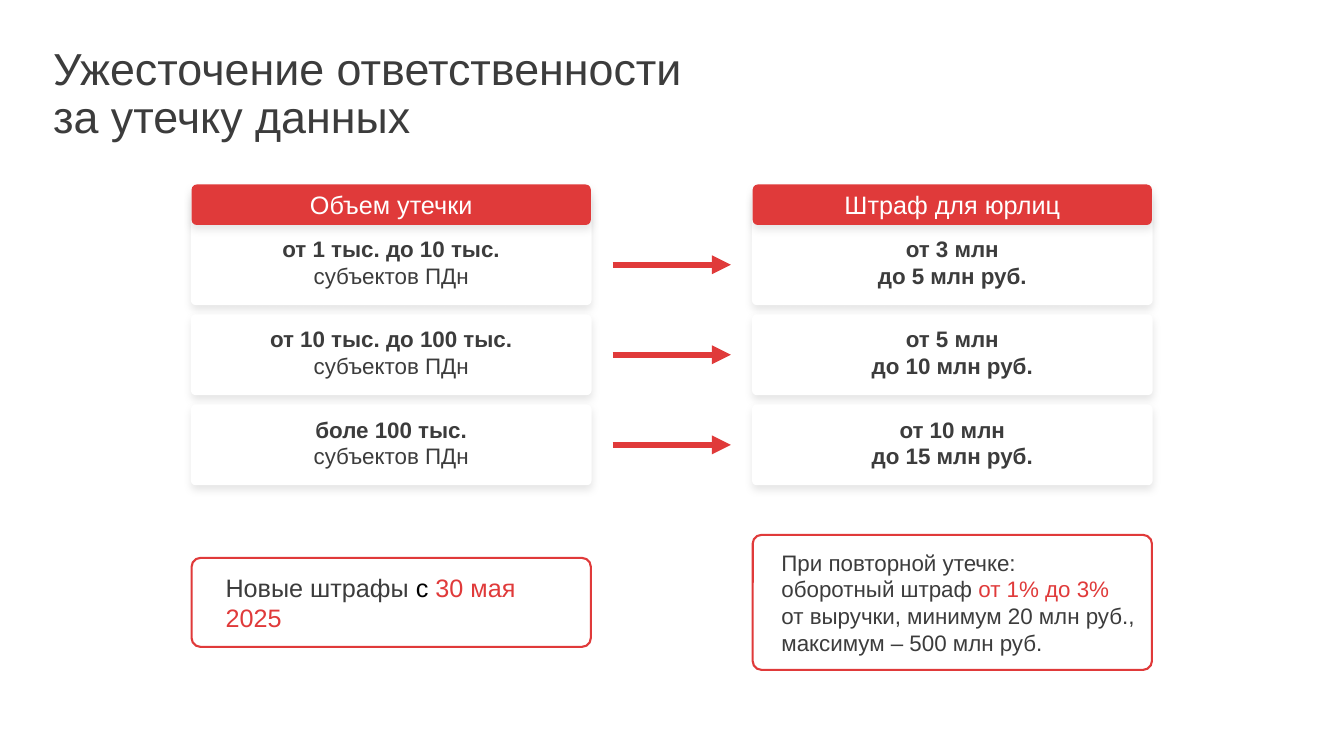
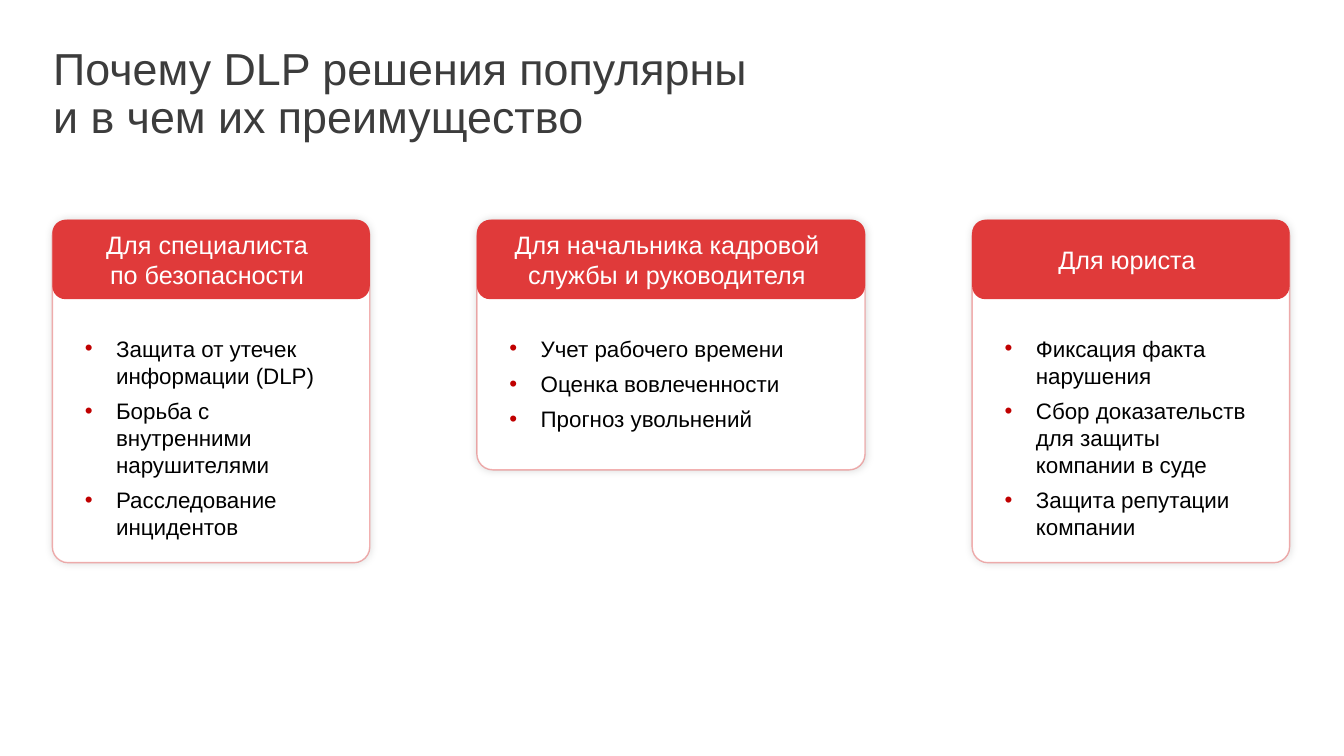
from lxml.etree import SubElement
from pptx import Presentation
from pptx.dml.color import RGBColor
from pptx.enum.shapes import MSO_CONNECTOR, MSO_SHAPE
from pptx.enum.text import MSO_ANCHOR, PP_ALIGN
from pptx.oxml.ns import qn
from pptx.util import Cm, Pt

FONT = "Arial"
RED, DARK, WHITE, BLACK, DOT = "E03A3A", "3C3C3C", "FFFFFF", "000000", "C00000"
SOFT = (10, 6, 3, 93)  # opacity %, blur pt, distance pt, angle
GLOW = (15, 6, 0, 180)


def paint(fmt, hue):
    fmt.solid()
    fmt.fore_color.rgb = RGBColor.from_string(hue)


def shade(shape, alpha, blur, dist, angle):
    """Give the shape an outer black shadow."""
    effects = shape._element.spPr.find(qn("a:effectLst"))
    outer = SubElement(effects, qn("a:outerShdw"), blurRad=str(Pt(blur)),
                       dist=str(Pt(dist)), dir=str(angle * 60000),
                       algn="ctr", rotWithShape="0")
    hue = SubElement(outer, qn("a:srgbClr"), val=BLACK)
    SubElement(hue, qn("a:alpha"), val=str(alpha * 1000))


def panel(slide, box, round_by, fill=None, line=None, width=1, alpha=100, shadow=None):
    """Add a rounded box; round_by is the corner radius in cm."""
    shape = slide.shapes.add_shape(MSO_SHAPE.ROUNDED_RECTANGLE, *map(Cm, box))
    shape.adjustments[0] = round_by / min(box[2:])
    shape.shadow.inherit = False
    if fill:
        paint(shape.fill, fill)
    else:
        shape.fill.background()
    if line:
        paint(shape.line.fill, line)
        shape.line.width = Pt(width)
        if alpha < 100:
            hue = shape.line._ln.find(".//" + qn("a:srgbClr"))
            SubElement(hue, qn("a:alpha"), val=str(alpha * 1000))
    else:
        shape.line.fill.background()
    if shadow:
        shade(shape, *shadow)
    return shape


def bullet(para):
    props = para._p.get_or_add_pPr()
    props.set("marL", str(Cm(0.79)))
    props.set("indent", str(-Cm(0.79)))
    SubElement(SubElement(props, qn("a:buClr")), qn("a:srgbClr"), val=DOT)
    SubElement(props, qn("a:buFont"), typeface=FONT)
    SubElement(props, qn("a:buChar"), char="•")
    para.space_after = Pt(6)


def write(shape, paras, size, hue, align=PP_ALIGN.LEFT, anchor=MSO_ANCHOR.MIDDLE,
          pads=(0.25, 0.13, 0.25, 0.13), dots=False, pitch=None):
    """Fill a shape; each paragraph is a list of (text, colour or None, bold) runs."""
    frame = shape.text_frame
    frame.word_wrap = True
    frame.vertical_anchor = anchor
    (frame.margin_left, frame.margin_top,
     frame.margin_right, frame.margin_bottom) = map(Cm, pads)
    for i, runs in enumerate(paras):
        para = frame.add_paragraph() if i else frame.paragraphs[0]
        para.alignment = align
        if dots:
            bullet(para)
        if pitch:
            para.line_spacing = pitch
        for text, tint, bold in runs:
            run = para.add_run()
            run.text = text
            run.font.name, run.font.size, run.font.bold = FONT, Pt(size), bold
            run.font.color.rgb = RGBColor.from_string(tint or hue)


def plain(*lines):
    return [[(line, None, False)] for line in lines]


def start(deck, *title):
    """Add a blank slide with its title."""
    slide = deck.slides.add_slide(deck.slide_layouts[6])
    box = slide.shapes.add_textbox(Cm(1.09), Cm(0.99), Cm(24.2), Cm(2.8))
    write(box, plain(*title), 32, DARK, pitch=0.9)
    return slide


def column(slide, left, top, width, head, rows):
    """Stack cards under a red header; return the middle height of each card."""
    head_h, row_h, step, tuck = 1.02, 2.0, 2.27, 0.8
    mids = []
    for i, row in enumerate(rows):
        y = top + head_h + i * step
        rise = 0 if i else tuck
        card = panel(slide, (left, y - rise, width, row_h + rise), 0.1,
                     WHITE, WHITE, shadow=SOFT)
        write(card, row, 16, DARK, PP_ALIGN.CENTER, MSO_ANCHOR.BOTTOM,
              (0.25, 0, 0.25, 0.35))
        mids.append(y + row_h / 2)
    band = panel(slide, (left, top, width, head_h), 0.13, RED, shadow=SOFT)
    write(band, plain(head), 18, WHITE, PP_ALIGN.CENTER)
    return mids


def arrow(slide, x1, x2, y):
    line = slide.shapes.add_connector(MSO_CONNECTOR.STRAIGHT, Cm(x1), Cm(y), Cm(x2), Cm(y))
    paint(line.line.fill, RED)
    line.line.width = Pt(4.5)
    SubElement(line.line._ln, qn("a:tailEnd"), type="triangle")
    SubElement(line._element.spPr, qn("a:effectLst"))


def note(slide, left, mid, width, height, paras, size, pads):
    """Add a red outlined remark centred on the height mid."""
    box = panel(slide, (left, mid - height / 2, width, height), 0.22, line=RED, width=1.5)
    write(box, paras, size, DARK, pads=pads)


def fines(deck):
    slide = start(deck, "Ужесточение ответственности", "за утечку данных")
    left, right, width, top, mid = 4.83, 18.97, 10.06, 4.65, 15.18
    sizes = ["от 1 тыс. до 10 тыс.", "от 10 тыс. до 100 тыс.", "боле 100 тыс."]
    sums = [("от 3 млн", "до 5 млн руб."), ("от 5 млн", "до 10 млн руб."),
            ("от 10 млн", "до 15 млн руб.")]
    mids = column(slide, left, top, width, "Объем утечки",
                  [[[(size, None, True)], [("субъектов ПДн", None, False)]]
                   for size in sizes])
    column(slide, right, top, width, "Штраф для юрлиц",
           [[[(part, None, True)] for part in pair] for pair in sums])
    for y in mids:
        arrow(slide, left + width + 0.55, right - 0.55, y)
    note(slide, left, mid, width, 2.24,
         [[("Новые штрафы ", None, False), ("с", BLACK, False),
           (" 30 мая 2025", RED, False)]], 18, (0.79, 0.13, 0.8, 0.13))
    note(slide, right, mid, width, 3.4,
         [*plain("При повторной утечке:"),
          [("оборотный штраф ", None, False), ("от 1% до 3%", RED, False)],
          *plain("от выручки, минимум 20 млн руб., максимум – 500 млн руб.")],
         16, (0.66, 0.13, 0.3, 0.13))


def card(slide, left, top, width, height, head, items, side):
    """Add a bulleted card with a red head; side is the right padding of the list."""
    body = panel(slide, (left, top, width, height), 0.4, WHITE, RED, alpha=40, shadow=GLOW)
    write(body, plain(*items), 16, BLACK, anchor=MSO_ANCHOR.TOP,
          pads=(0.7, 2.78, side, 0.13), dots=True)
    band = panel(slide, (left, top, width, 2.0), 0.33, RED)
    write(band, plain(*head), 18, WHITE, PP_ALIGN.CENTER, pads=(0.2, 0.13, 0.4, 0.13))


def gains(deck):
    slide = start(deck, "Почему DLP решения популярны", "и в чем их преимущество")
    cards = [
        (8.0, 8.64, ["Для специалиста", "по безопасности"],
         ["Защита от утечек информации (DLP)", "Борьба с внутренними нарушителями",
          "Расследование инцидентов"], 1.0),
        (9.78, 6.3, ["Для начальника кадровой", "службы и руководителя"],
         ["Учет рабочего времени", "Оценка вовлеченности", "Прогноз увольнений"], 0.5),
        (8.0, 8.64, ["Для юриста"],
         ["Фиксация факта нарушения", "Сбор доказательств для защиты компании в суде",
          "Защита репутации компании"], 0.5),
    ]
    left, gap = 1.32, 2.7
    for width, height, head, items, side in cards:
        card(slide, left, 5.54, width, height, head, items, side)
        left += width + gap


def main():
    deck = Presentation()
    deck.slide_width, deck.slide_height = Cm(33.87), Cm(19.05)
    fines(deck)
    gains(deck)
    deck.save("out.pptx")


if __name__ == "__main__":
    main()
